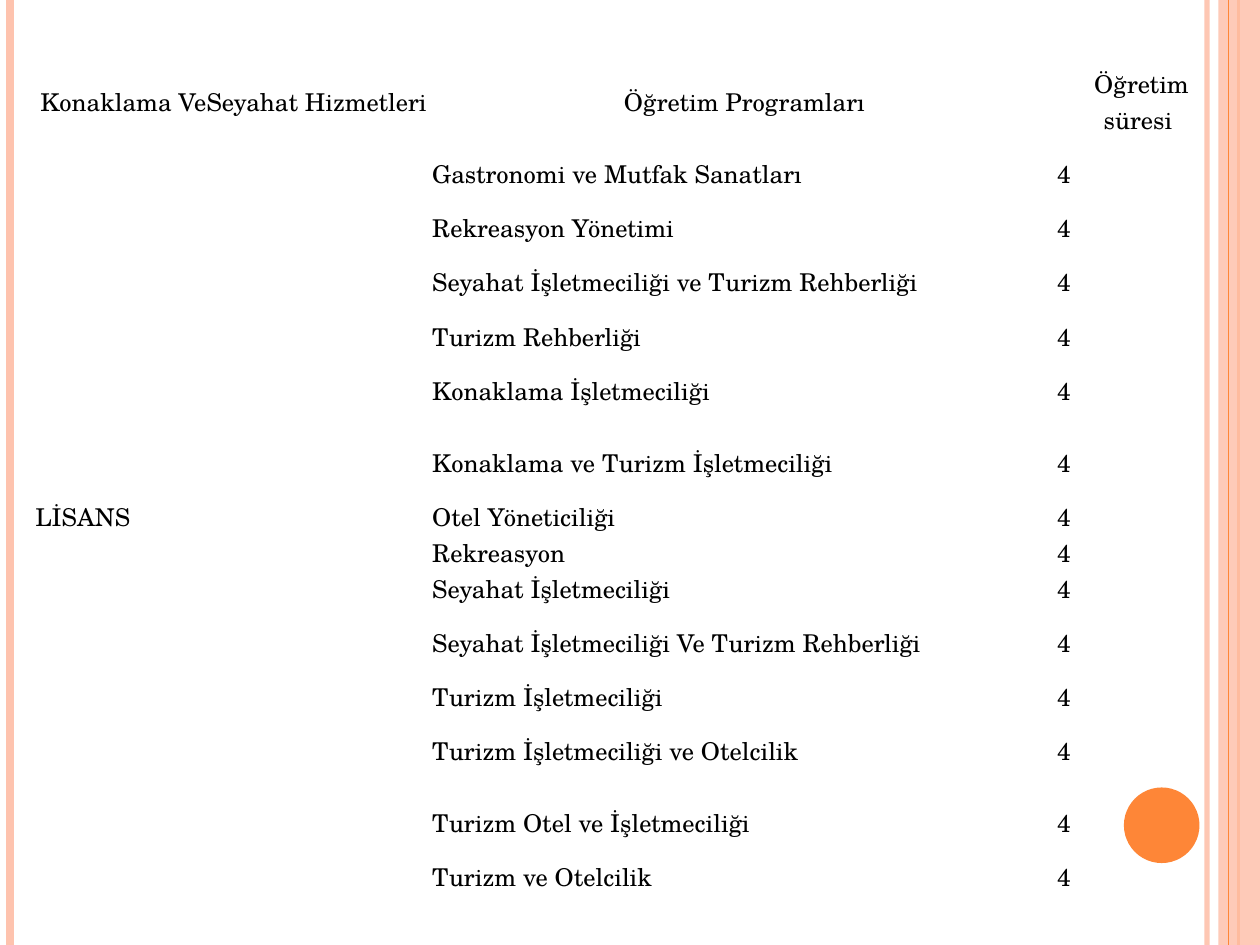
from pptx import Presentation
from pptx.dml.color import RGBColor
from pptx.enum.shapes import MSO_CONNECTOR, MSO_SHAPE
from pptx.enum.text import MSO_ANCHOR, PP_ALIGN
from pptx.oxml.ns import qn
from pptx.util import Inches, Pt
from lxml.etree import SubElement

PEACH = RGBColor(0xFE, 0xC3, 0xAE)
ORANGE = RGBColor(0xFE, 0x86, 0x37)
BLACK = RGBColor(0, 0, 0)
FONT = "TeX Gyre Schola"
NO_GRID_STYLE = "{2D5ABB26-0587-4C30-8999-92F81FD0307C}"

HEADERS = ["Konaklama VeSeyahat Hizmetleri", "Öğretim Programları", "Öğretim süresi "]
LEVEL = "LİSANS"
YEARS = "4"
COLUMN_WIDTHS = [3.15, 4.96, 1.34]
SINGLE, DOUBLE = 0.286, 0.572
PROGRAMS = [
    ("Gastronomi ve Mutfak Sanatları", DOUBLE),
    ("Rekreasyon Yönetimi", SINGLE),
    ("Seyahat İşletmeciliği ve Turizm Rehberliği", DOUBLE),
    ("Turizm Rehberliği", SINGLE),
    ("Konaklama İşletmeciliği", DOUBLE),
    ("Konaklama ve Turizm İşletmeciliği", DOUBLE),
    ("Otel Yöneticiliği", SINGLE),
    ("Rekreasyon", SINGLE),
    ("Seyahat İşletmeciliği", SINGLE),
    ("Seyahat İşletmeciliği Ve Turizm Rehberliği", DOUBLE),
    ("Turizm İşletmeciliği", SINGLE),
    ("Turizm İşletmeciliği ve Otelcilik", DOUBLE),
    ("Turizm Otel ve İşletmeciliği", DOUBLE),
    ("Turizm ve Otelcilik", SINGLE),
]


def set_opacity(shape, percent):
    """Apply an opacity to the one solid colour of a shape or line."""
    color = next(shape._element.spPr.iter(qn("a:srgbClr")))
    SubElement(color, qn("a:alpha"), val=str(percent * 1000))


def add_stripe(slide, x, height, color, width, opacity=100):
    line = slide.shapes.add_connector(
        MSO_CONNECTOR.STRAIGHT, Inches(x), 0, Inches(x), Inches(height))
    line.line.color.rgb = color
    line.line.width = Pt(width)
    SubElement(line._element.spPr, qn("a:effectLst"))
    if opacity < 100:
        set_opacity(line, opacity)


def add_solid(slide, kind, left, top, width, height, color):
    shape = slide.shapes.add_shape(
        kind, Inches(left), Inches(top), Inches(width), Inches(height))
    shape.shadow.inherit = False
    shape.fill.solid()
    shape.fill.fore_color.rgb = color
    shape.line.fill.background()
    return shape


def add_decoration(slide, width, height):
    add_stripe(slide, width - 0.42, height, PEACH, 3, 93)
    add_stripe(slide, 0.08, height, PEACH, 4.5)
    add_stripe(slide, width - 0.17, height, ORANGE, 1.5)
    band = add_solid(slide, MSO_SHAPE.RECTANGLE, width - 0.33, 0, 0.33, height, PEACH)
    set_opacity(band, 87)
    add_stripe(slide, width - 0.25, height, ORANGE, 0.75)
    add_solid(slide, MSO_SHAPE.OVAL, width - 1.08, height - 1.25, 0.6, 0.6, ORANGE)


def write_cell(cell, text, align=PP_ALIGN.LEFT):
    cell.fill.background()
    cell.vertical_anchor = MSO_ANCHOR.MIDDLE
    cell.margin_left = cell.margin_right = cell.margin_top = cell.margin_bottom = 0
    paragraph = cell.text_frame.paragraphs[0]
    paragraph.alignment = align
    run = paragraph.add_run()
    run.text = text
    run.font.name = FONT
    run.font.size = Pt(14)
    run.font.color.rgb = BLACK


def add_program_table(slide, left, top):
    heights = [DOUBLE] + [height for _, height in PROGRAMS]
    table = slide.shapes.add_table(
        len(heights), len(COLUMN_WIDTHS), Inches(left), Inches(top),
        Inches(sum(COLUMN_WIDTHS)), Inches(sum(heights))).table
    table.first_row = table.horz_banding = False
    table._tbl.tblPr.find(qn("a:tableStyleId")).text = NO_GRID_STYLE
    for column, width in zip(table.columns, COLUMN_WIDTHS):
        column.width = Inches(width)
    for row, height in zip(table.rows, heights):
        row.height = Inches(height)

    for index, header in enumerate(HEADERS):
        write_cell(table.cell(0, index), header, PP_ALIGN.CENTER)
    table.cell(1, 0).merge(table.cell(len(PROGRAMS), 0))
    write_cell(table.cell(1, 0), LEVEL)
    for index, (program, _) in enumerate(PROGRAMS, start=1):
        write_cell(table.cell(index, 1), program)
        write_cell(table.cell(index, 2), YEARS)


def main():
    presentation = Presentation()
    presentation.slide_width = Inches(10)
    presentation.slide_height = Inches(7.5)
    slide = presentation.slides.add_slide(presentation.slide_layouts[6])
    add_decoration(slide, 10, 7.5)
    add_program_table(slide, 0.28, 0.52)
    presentation.save("out.pptx")


if __name__ == "__main__":
    main()
